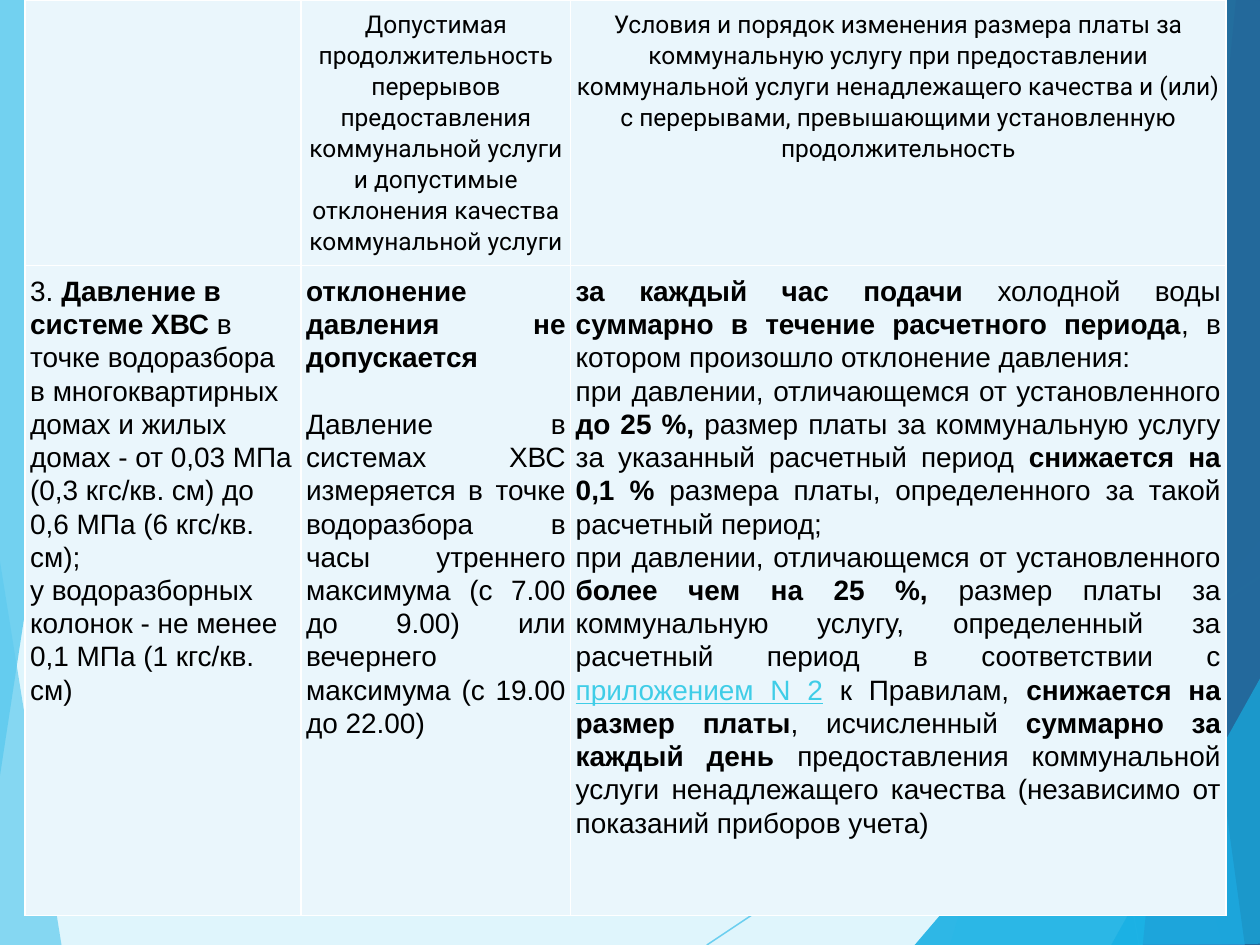
from lxml.etree import SubElement
from pptx import Presentation
from pptx.dml.color import RGBColor
from pptx.enum.shapes import MSO_CONNECTOR
from pptx.enum.text import PP_ALIGN
from pptx.oxml.ns import qn
from pptx.util import Inches, Pt

COLORS = {
    "background": "DFF5FC", "sky": "5FCBEF", "azure": "17B0E4",
    "blue": "2E83C3", "navy": "226292", "cell": "EAF6FC",
    "border": "FFFFFF", "text": "000000", "link": "3FCDE7",
}

# Facets of the backdrop: points in inches, colour, opacity in percent
LEFT_WEDGE = ([(-0.01, 4.39), (0.49, 7.51), (-0.01, 7.5)], "sky", 70)
LEFT_BAND = ([(-0.01, 0), (0.94, -0.01), (0.94, 0.01), (-0.01, 6.22)], "sky", 85)
RIGHT_FACETS = [
    ([(9.75, 0), (7.54, 7.5), (10.02, 7.51), (10.01, 0.01)], "sky", 36),
    ([(7.88, -0.01), (9.19, 7.5), (10.01, 7.5), (10.01, -0.01)], "sky", 20),
    ([(7.26, 7.5), (10, 4.29), (10.01, 7.5)], "azure", 66),
    ([(7.67, -0.01), (9.7, 7.5), (10.01, 7.49), (10.01, -0.01)], "azure", 50),
    ([(9.81, -0.01), (9.07, 7.5), (10.01, 7.5), (10, -0.01)], "blue", 70),
    ([(8.85, -0.01), (9.88, 7.5), (10.02, 7.5), (10, -0.01)], "navy", 82),
    ([(8.82, 7.5), (10.02, 5.35), (10.02, 7.49)], "azure", 66),
]
RAYS = [((5.61, 7.5), (10.01, 4.57)), ((7.7, 0), (9.04, 7.5))]

# Each cell is a list of paragraphs, each paragraph a list of (text, style)
HEADINGS = [
    [],
    [[("Допустимая продолжительность перерывов предоставления коммунальной "
       "услуги и допустимые отклонения качества коммунальной услуги", "plain")]],
    [[("Условия и порядок изменения размера платы за коммунальную услугу при "
       "предоставлении коммунальной услуги ненадлежащего качества и (или) с "
       "перерывами, превышающими установленную продолжительность", "plain")]],
]
PRESSURE_NORM = [
    [("3. ", "plain"), ("Давление в системе ХВС ", "bold"),
     ("в точке водоразбора в многоквартирных домах и жилых домах - от 0,03 МПа "
      "(0,3 кгс/кв. см) до 0,6 МПа (6 кгс/кв. см);", "plain")],
    [("у водоразборных колонок - не менее 0,1 МПа (1 кгс/кв. см)", "plain")],
]
ALLOWED_DEVIATION = [
    [("отклонение давления не допускается", "bold")],
    [("Давление в системах ХВС измеряется в точке водоразбора в часы утреннего "
      "максимума (с 7.00 до 9.00) или вечернего максимума (с 19.00 до 22.00)",
      "plain")],
]
PAYMENT_CHANGE = [
    [("за каждый час подачи", "bold"), (" холодной воды ", "plain"),
     ("суммарно в течение расчетного периода", "bold"),
     (", в котором произошло отклонение давления:", "plain")],
    [("при давлении, отличающемся от установленного ", "plain"),
     ("до 25 %, ", "bold"),
     ("размер платы за коммунальную услугу за указанный расчетный период ", "plain"),
     ("снижается на 0,1 % ", "bold"),
     ("размера платы, определенного за такой расчетный период;", "plain")],
    [("при давлении, отличающемся от установленного ", "plain"),
     ("более чем на 25 %, ", "bold"),
     ("размер платы за коммунальную услугу, определенный за расчетный период в "
      "соответствии с ", "plain"),
     ("приложением N 2", "link"), (" к Правилам, ", "plain"),
     ("снижается на размер платы", "bold"), (", исчисленный ", "plain"),
     ("суммарно за каждый день ", "bold"),
     ("предоставления коммунальной услуги ненадлежащего качества (независимо от "
      "показаний приборов учета)", "plain")],
]


def color(name):
    return RGBColor.from_string(COLORS[name])


def set_opacity(properties, percent):
    for rgb in properties.iter(qn("a:srgbClr")):
        SubElement(rgb, qn("a:alpha"), val=str(percent * 1000))


def add_facet(slide, points, fill, opacity):
    corners = [(Inches(x), Inches(y)) for x, y in points]
    outline = slide.shapes.build_freeform(*corners[0])
    outline.add_line_segments(corners[1:], close=True)
    facet = outline.convert_to_shape()
    facet.shadow.inherit = False
    facet.fill.solid()
    facet.fill.fore_color.rgb = color(fill)
    set_opacity(facet.element.spPr, opacity)
    facet.line.fill.background()


def add_ray(slide, start, end):
    ray = slide.shapes.add_connector(
        MSO_CONNECTOR.STRAIGHT, *[Inches(value) for value in start + end])
    ray.line.color.rgb = color("sky")
    ray.line.width = Pt(0.75)
    set_opacity(ray.element.spPr, 70)
    SubElement(ray.element.spPr, qn("a:effectLst"))


def add_backdrop(slide):
    slide.background.fill.solid()
    slide.background.fill.fore_color.rgb = color("background")
    add_facet(slide, *LEFT_WEDGE)
    # The right side is layered twice for deeper colour
    for _ in range(2):
        for start, end in RAYS:
            add_ray(slide, start, end)
        for facet in RIGHT_FACETS:
            add_facet(slide, *facet)
    add_facet(slide, *LEFT_BAND)


def write_text(frame, paragraphs, font="Arial", size=16, align=PP_ALIGN.LEFT, gap=0):
    for index, runs in enumerate(paragraphs):
        paragraph = frame.paragraphs[0] if index == 0 else frame.add_paragraph()
        paragraph.alignment = align
        paragraph.line_spacing = 1.07
        paragraph.space_before = Pt(gap if index else 0)
        for text, style in runs:
            run = paragraph.add_run()
            run.text = text
            run.font.name = font
            run.font.size = Pt(size)
            run.font.bold = style == "bold"
            run.font.underline = style == "link"
            run.font.color.rgb = color("link" if style == "link" else "text")


def format_cell(cell):
    cell.margin_left = cell.margin_right = Inches(0.04)
    cell.margin_top = cell.margin_bottom = Inches(0.07)
    # Borders come before the fill in the cell properties
    properties = cell._tc.get_or_add_tcPr()
    for side in ("lnL", "lnR", "lnT", "lnB"):
        border = SubElement(properties, qn(f"a:{side}"), w=str(Pt(1)))
        fill = SubElement(border, qn("a:solidFill"))
        SubElement(fill, qn("a:srgbClr"), val=COLORS["border"])
    cell.fill.solid()
    cell.fill.fore_color.rgb = color("cell")


def add_tariff_table(slide, left, top, widths, heights):
    table = slide.shapes.add_table(
        len(heights), len(widths), Inches(left), Inches(top),
        Inches(sum(widths)), Inches(sum(heights))).table
    table.first_row = table.horz_banding = False
    for column, width in zip(table.columns, widths):
        column.width = Inches(width)
    for row, height in zip(table.rows, heights):
        row.height = Inches(height)
    for cell in table.iter_cells():
        format_cell(cell)

    # Heading row
    for column, heading in enumerate(HEADINGS):
        write_text(table.cell(0, column).text_frame, heading,
                   font="Roboto", size=14, align=PP_ALIGN.CENTER)
    # Water pressure row
    write_text(table.cell(1, 0).text_frame, PRESSURE_NORM)
    write_text(table.cell(1, 1).text_frame, ALLOWED_DEVIATION,
               align=PP_ALIGN.JUSTIFY, gap=19)
    write_text(table.cell(1, 2).text_frame, PAYMENT_CHANGE, align=PP_ALIGN.JUSTIFY)


def main():
    deck = Presentation()
    deck.slide_width, deck.slide_height = Inches(10), Inches(7.5)
    slide = deck.slides.add_slide(deck.slide_layouts[6])
    add_backdrop(slide)
    add_tariff_table(slide, 0.2, 0, widths=[2.19, 2.14, 5.2], heights=[2, 5.16])
    deck.save("out.pptx")


if __name__ == "__main__":
    main()
